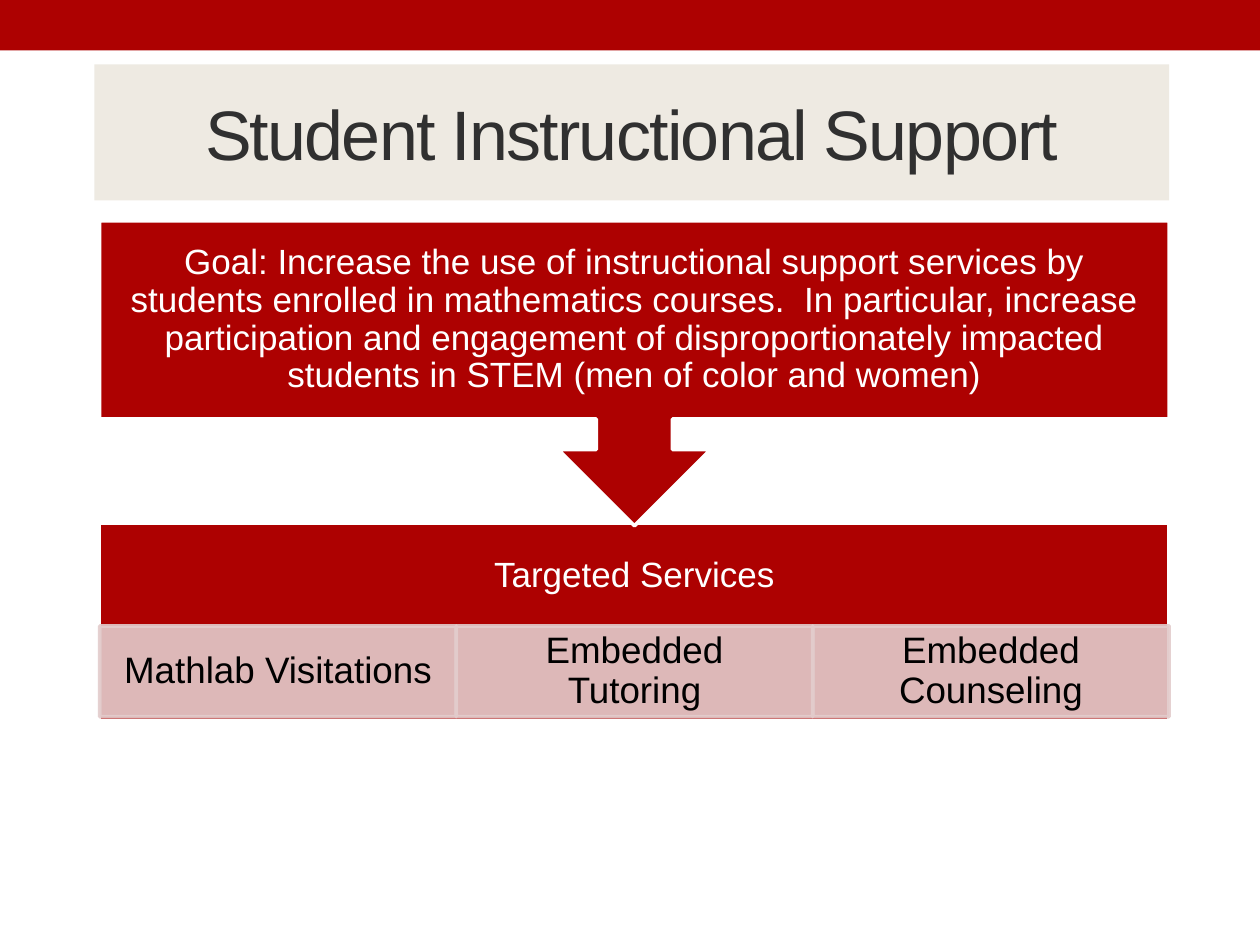
from lxml import etree
from pptx import Presentation
from pptx.dml.color import RGBColor
from pptx.enum import shapes, text
from pptx.oxml import ns
from pptx.util import Cm, Pt

COLORS = {
    "red": "AD0101",
    "beige": "EEEAE2",
    "pink": "E3CCCC",
    "white": "FFFFFF",
    "black": "000000",
    "title": "303030",
}
GOAL = (
    "Goal: Increase the use of instructional support services by students "
    "enrolled in mathematics courses.  In particular, increase participation "
    "and engagement of disproportionately impacted students in STEM "
    "(men of color and women)"
)
SERVICES = ["Mathlab Visitations", "Embedded Tutoring", "Embedded Counseling"]
LINE_WIDTH = Pt(2.08)


def rgb(name):
    return RGBColor.from_string(COLORS[name])


def set_attributes(target, values):
    for name, value in values.items():
        setattr(target, name, value)


def place(shape, box):
    left, top, width, height = (Cm(length) for length in box)
    set_attributes(shape, dict(left=left, top=top, width=width, height=height))


def set_alpha(fill_format, shape_properties, percent):
    """Make every solid colour of a shape, fill and line, partly transparent."""
    for color in shape_properties.iter(ns.qn("a:srgbClr")):
        etree.SubElement(color, ns.qn("a:alpha"), val=str(percent * 1000))


def write(shape, content, size, color, margins, line_spacing=0.9):
    """Fill a shape with one centred paragraph; margins are left/right, top, bottom."""
    side, top, bottom = (Cm(margin) for margin in margins)
    frame = shape.text_frame
    frame.text = content
    set_attributes(frame, {
        "word_wrap": True,
        "auto_size": text.MSO_AUTO_SIZE.NONE,
        "vertical_anchor": text.MSO_ANCHOR.MIDDLE,
        "margin_left": side,
        "margin_right": side,
        "margin_top": top,
        "margin_bottom": bottom,
    })
    paragraph = frame.paragraphs[0]
    set_attributes(paragraph, {
        "alignment": text.PP_ALIGN.CENTER,
        "line_spacing": line_spacing,
    })
    run = paragraph.runs[0]
    set_attributes(run.font, {"name": "Arial", "size": Pt(size)})
    run.font.color.rgb = rgb(color)
    return run


def add_block(slide, kind, box, fill, line=None):
    shape = slide.shapes.add_shape(kind, *(Cm(length) for length in box))
    shape.shadow.inherit = False
    shape.fill.solid()
    shape.fill.fore_color.rgb = rgb(fill)
    if line:
        shape.line.color.rgb = rgb(line)
        shape.line.width = LINE_WIDTH
    else:
        shape.line.fill.background()
    return shape


def add_title(slide, box):
    title = slide.shapes.title
    place(title, box)
    title.fill.solid()
    title.fill.fore_color.rgb = rgb("beige")
    run = write(title, "Student Instructional Support", 40, "title",
                (0.25, 0.13, 0.13), line_spacing=1.0)
    run.font._element.set("spc", "-100")


def add_services(slide, box):
    """Red panel with a heading above a row of equal service cells."""
    left, top, width, height = box
    cell_top, cell_height = 2.08, 1.83
    panel = add_block(slide, shapes.MSO_SHAPE.RECTANGLE, box, "red", "white")
    heading_height = 2.16
    write(panel, "Targeted Services", 20, "white",
          (0.41, 0.41, height - heading_height + 0.41))
    cell_width = width / len(SERVICES)
    for index, service in enumerate(SERVICES):
        cell_box = (left + index * cell_width, top + cell_top, cell_width, cell_height)
        cell = add_block(slide, shapes.MSO_SHAPE.RECTANGLE, cell_box, "pink", "pink")
        set_alpha(cell.fill, cell._element.spPr, 90)
        write(cell, service, 21, "black", (0.41, 0.08, 0.08))


def add_goal(slide, box):
    goal = add_block(slide, shapes.MSO_SHAPE.DOWN_ARROW_CALLOUT, box, "red", "white")
    write(goal, GOAL, 20, "white", (0.41, 0.41, 0.41))


def main():
    presentation = Presentation()
    presentation.slide_width, presentation.slide_height = Cm(25.4), Cm(19.05)
    slide = presentation.slides.add_slide(presentation.slide_layouts[5])
    add_block(slide, shapes.MSO_SHAPE.RECTANGLE, (0, 0, 25.4, 1.02), "red")
    add_title(slide, (1.9, 1.3, 21.67, 2.74))
    add_services(slide, (2.01, 10.54, 21.56, 3.99))
    add_goal(slide, (2.01, 4.45, 21.56, 6.15))
    presentation.save("out.pptx")


if __name__ == "__main__":
    main()
